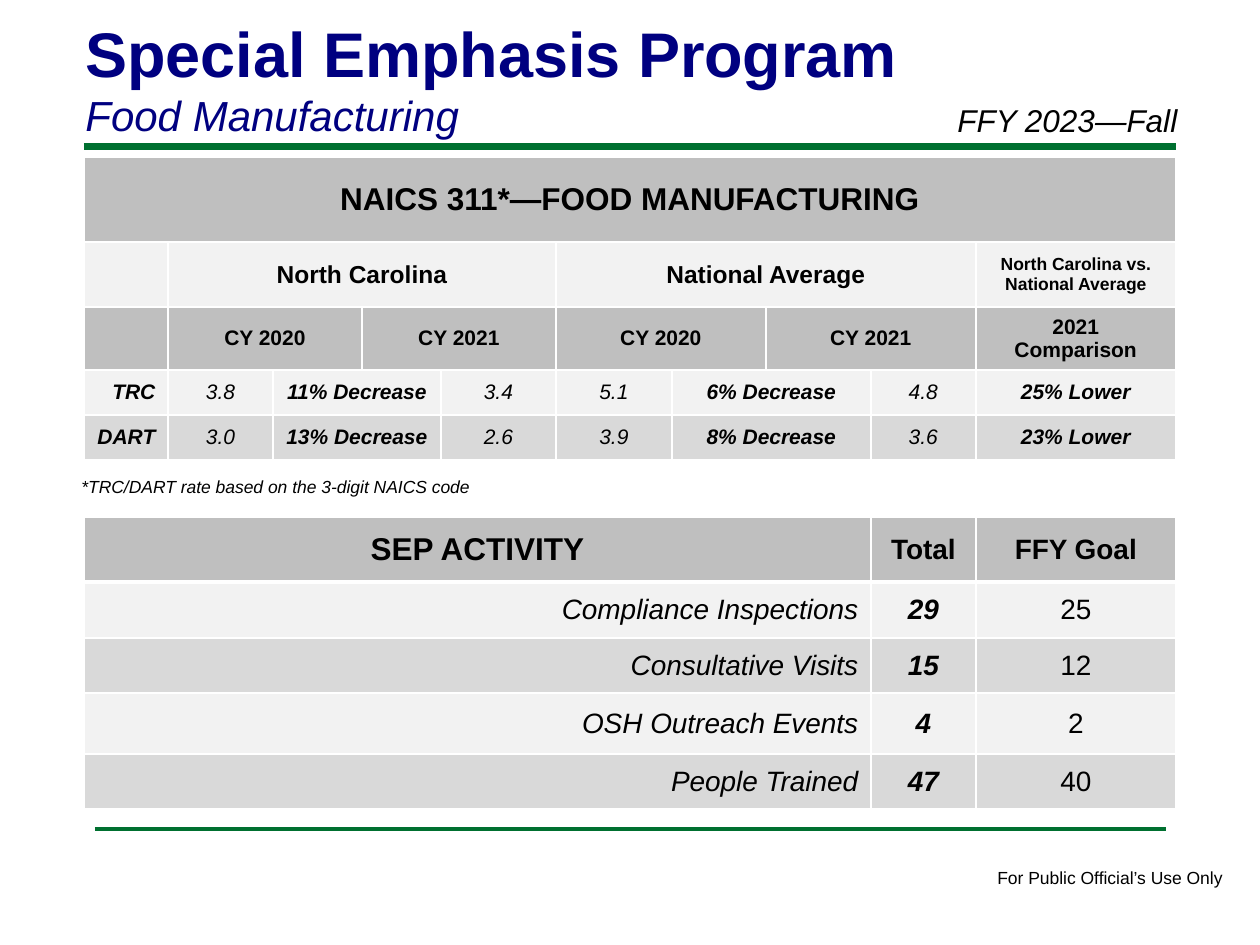
"""Build the Special Emphasis Program slide with its rate and activity tables."""
from dataclasses import dataclass

from lxml.etree import SubElement
from pptx import Presentation
from pptx.dml.color import RGBColor
from pptx.enum.shapes import MSO_CONNECTOR
from pptx.enum.text import MSO_ANCHOR, PP_ALIGN
from pptx.oxml.ns import qn
from pptx.util import Pt


@dataclass(frozen=True)
class Theme:
    font: str = "Arial"
    ink: str = "000000"
    navy: str = "000080"
    green: str = "007030"
    border: str = "FFFFFF"
    header: str = "BFBFBF"
    light: str = "F2F2F2"
    band: str = "D9D9D9"
    title: int = 36
    subtitle: int = 24
    heading: int = 18
    body: int = 16
    group: int = 14
    rate: int = 12
    note: int = 10


@dataclass(frozen=True)
class Style:
    size: int
    bold: bool = False
    italic: bool = False
    color: str = Theme.ink
    align: PP_ALIGN = PP_ALIGN.CENTER


THEME = Theme()
EMU_PER_PX = 914400 / 126

HEADING = Style(THEME.heading, bold=True)
GROUP = Style(THEME.group, bold=True)
VERSUS = Style(THEME.note, bold=True)
YEAR = Style(THEME.rate, bold=True)
MEASURE = Style(THEME.rate, bold=True, italic=True, align=PP_ALIGN.RIGHT)
RATE = Style(THEME.rate, italic=True)
CHANGE = Style(THEME.rate, bold=True, italic=True)
COLUMN = Style(THEME.body, bold=True)
ACTIVITY = Style(THEME.body, italic=True, align=PP_ALIGN.RIGHT)
TOTAL = Style(THEME.body, bold=True, italic=True)
GOAL = Style(THEME.body)

TITLE = Style(THEME.title, bold=True, color=THEME.navy, align=PP_ALIGN.LEFT)
SUBTITLE = Style(THEME.subtitle, italic=True, color=THEME.navy, align=PP_ALIGN.LEFT)
PERIOD = Style(THEME.heading, italic=True, align=PP_ALIGN.LEFT)
FOOTNOTE = Style(THEME.note, italic=True, align=PP_ALIGN.LEFT)
FOOTER = Style(THEME.note, align=PP_ALIGN.LEFT)

RULES = [(84, 1176, 147, 4), (95, 1166, 829, 2)]

TEXTS = [
    ((985, 861, 253, 34), False, [("For Public Official’s Use Only", FOOTER)]),
    ((73, 8, 1040, 140), True, [("Special Emphasis Program", TITLE), ("Food Manufacturing", SUBTITLE)]),
    ((69, 470, 426, 34), False, [("*TRC/DART rate based on the 3-digit NAICS code", FOOTNOTE)]),
    ((945, 95, 315, 50), True, [("FFY 2023—Fall", PERIOD)]),
]

RATES = [
    ("TRC", "3.8", "11% Decrease", "3.4", "5.1", "6% Decrease", "4.8", "25% Lower"),
    ("DART", "3.0", "13% Decrease", "2.6", "3.9", "8% Decrease", "3.6", "23% Lower"),
]
RATE_LAYOUT = [(1, MEASURE), (1, RATE), (2, CHANGE), (1, RATE), (1, RATE), (2, CHANGE), (1, RATE), (1, CHANGE)]

RATE_ROWS = [
    [("NAICS 311*—FOOD MANUFACTURING", 10, HEADING)],
    [
        ("", 1, GROUP),
        ("North Carolina", 4, GROUP),
        ("National Average", 4, GROUP),
        ("North Carolina vs. National Average", 1, VERSUS),
    ],
    [("", 1, YEAR)]
    + [(year, 2, YEAR) for year in ("CY 2020", "CY 2021") * 2]
    + [("2021 Comparison", 1, YEAR)],
] + [[(text, span, style) for text, (span, style) in zip(row, RATE_LAYOUT)] for row in RATES]

ACTIVITIES = [
    ("Compliance Inspections", "29", "25"),
    ("Consultative Visits", "15", "12"),
    ("OSH Outreach Events", "4", "2"),
    ("People Trained", "47", "40"),
]
ACTIVITY_ROWS = [[("SEP ACTIVITY", 1, HEADING), ("Total", 1, COLUMN), ("FFY Goal", 1, COLUMN)]] + [
    [(text, 1, style) for text, style in zip(row, (ACTIVITY, TOTAL, GOAL))] for row in ACTIVITIES
]

TABLES = [
    {
        "top": 517,
        "columns": [787, 105, 200],
        "heights": [65, 56, 55, 61, 55],
        "fills": [THEME.header, THEME.light, THEME.band, THEME.light, THEME.band],
        "header_line": 3,
        "rows": ACTIVITY_ROWS,
    },
    {
        "top": 157,
        "columns": [84, 105, 89, 79, 115, 116, 94, 105, 105, 200],
        "heights": [85, 65, 63, 45, 45],
        "fills": [THEME.header, THEME.light, THEME.header, THEME.light, THEME.band],
        "header_line": 1,
        "rows": RATE_ROWS,
    },
]
TABLE_LEFT = 84


def px(length):
    return round(length * EMU_PER_PX)


def write(paragraph, text, style):
    paragraph.alignment = style.align
    run = paragraph.add_run()
    run.text = text
    font = run.font
    font.name = THEME.font
    font.size = Pt(style.size)
    font.bold = style.bold
    font.italic = style.italic
    font.color.rgb = RGBColor.from_string(style.color)


def add_rule(slide, left, right, y, width):
    rule = slide.shapes.add_connector(MSO_CONNECTOR.STRAIGHT, px(left), px(y), px(right), px(y))
    rule.line.color.rgb = RGBColor.from_string(THEME.green)
    rule.line.width = Pt(width)
    SubElement(rule._element.spPr, qn("a:effectLst"))


def add_text(slide, box, wrap, lines):
    frame = slide.shapes.add_textbox(*map(px, box)).text_frame
    frame.word_wrap = wrap
    for index, (text, style) in enumerate(lines):
        paragraph = frame.add_paragraph() if index else frame.paragraphs[0]
        write(paragraph, text, style)


def format_cell(cell, fill, top_line, bottom_line):
    properties = cell._tc.get_or_add_tcPr()
    for side, width in (("L", 1), ("R", 1), ("T", top_line), ("B", bottom_line)):
        line = SubElement(properties, qn(f"a:ln{side}"), w=str(Pt(width)))
        SubElement(SubElement(line, qn("a:solidFill")), qn("a:srgbClr"), val=THEME.border)
    cell.fill.solid()
    cell.fill.fore_color.rgb = RGBColor.from_string(fill)
    cell.vertical_anchor = MSO_ANCHOR.MIDDLE


def add_table(slide, top, columns, heights, fills, header_line, rows):
    box = (TABLE_LEFT, top, sum(columns), sum(heights))
    table = slide.shapes.add_table(len(rows), len(columns), *map(px, box)).table
    table.first_row = table.horz_banding = False
    for column, width in zip(table.columns, columns):
        column.width = px(width)
    for index, (row, height, fill) in enumerate(zip(rows, heights, fills)):
        table.rows[index].height = px(height)
        for cell in table.rows[index].cells:
            format_cell(cell, fill, header_line if index == 1 else 1, header_line if index == 0 else 1)
        start = 0
        for text, span, style in row:
            cell = table.cell(index, start)
            if span > 1:
                cell.merge(table.cell(index, start + span - 1))
            if text:
                write(cell.text_frame.paragraphs[0], text, style)
            start += span


def main():
    presentation = Presentation()
    presentation.slide_width, presentation.slide_height = px(1260), px(945)
    slide = presentation.slides.add_slide(presentation.slide_layouts[6])
    for rule in RULES:
        add_rule(slide, *rule)
    for text in TEXTS:
        add_text(slide, *text)
    for table in TABLES:
        add_table(slide, **table)
    presentation.save("out.pptx")


if __name__ == "__main__":
    main()
